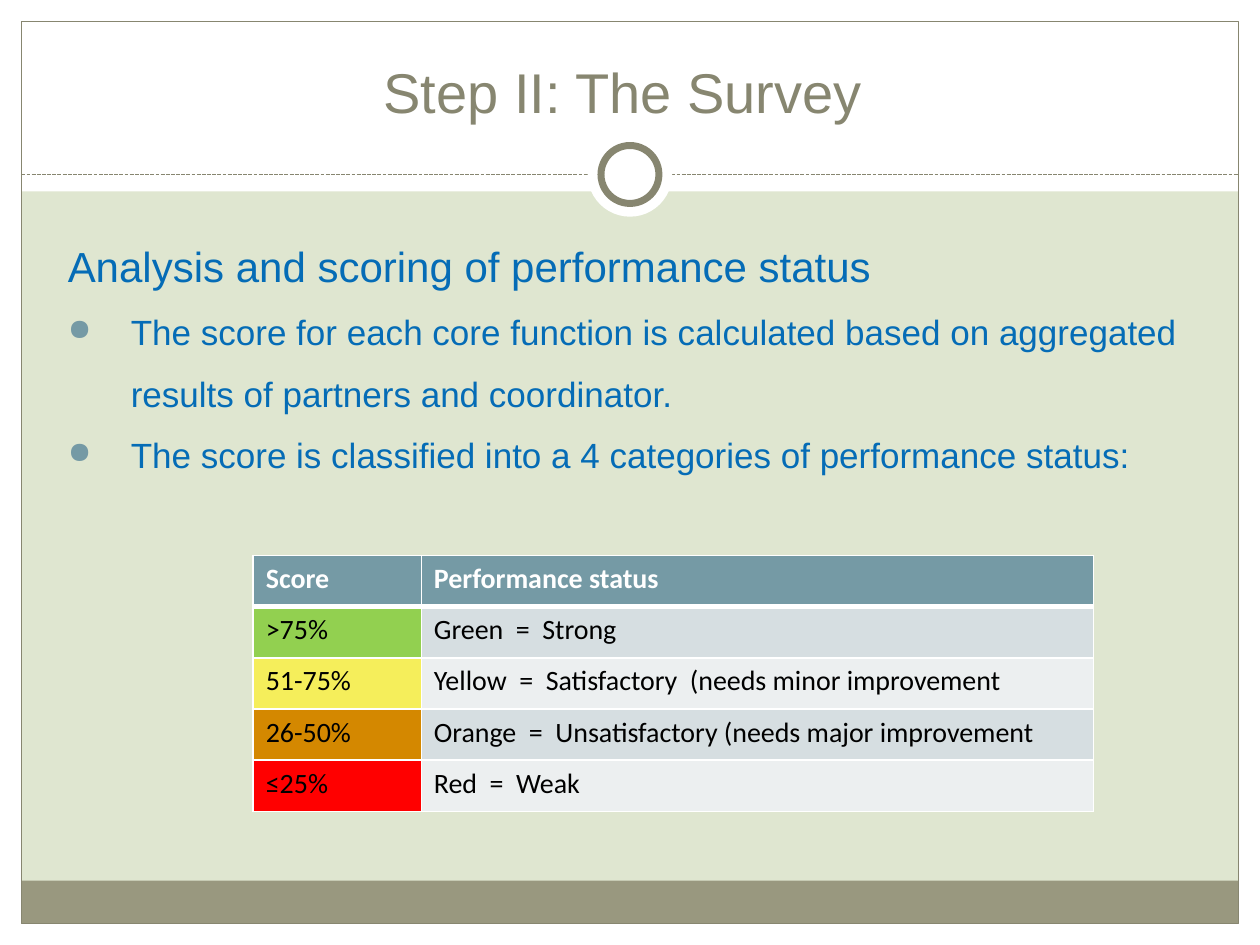
import pptx
import pptx.util
import pptx.dml.color
import pptx.enum.dml
import pptx.enum.shapes
import pptx.enum.text
import pptx.oxml
import pptx.oxml.ns
from lxml import etree
from dataclasses import dataclass
from typing import NamedTuple

Pt = pptx.util.Pt
KIND = pptx.enum.shapes.MSO_SHAPE
ALIGN = pptx.enum.text.PP_ALIGN
ANCHOR = pptx.enum.text.MSO_ANCHOR
qn = pptx.oxml.ns.qn


@dataclass(frozen=True)
class Theme:
    page: str = "DFE6D0"
    white: str = "FFFFFF"
    black: str = "000000"
    olive: str = "878670"
    foot: str = "99987F"
    blue: str = "056CB6"
    teal: str = "759AA5"
    bands: tuple = ("D6DEE1", "ECEFF0")
    face: str = "Arial"
    grid: str = "Calibri"
    title: int = 32
    lead: int = 24
    point: int = 20
    cell: int = 16
    thin: float = 0.75
    ring: int = 4


class Box(NamedTuple):
    x: float
    y: float
    w: float
    h: float

    def inner(self, x, y, w, h):
        return Box(self.x + x, self.y + y, w, h)

    def place(self):
        return [unit(v) for v in self]


THEME = Theme()
COLS, ROWS = 100, 75
PAGE = Box(0, 0, COLS, ROWS)
LEAD = "Analysis and scoring of performance status"
POINTS = [
    "The score for each core function is calculated based on aggregated results of partners and coordinator.",
    "The score is classified into a 4 categories of performance status:",
]
HEAD = ("Score", "Performance status")
SCORES = [
    (">75%", "Green  =  Strong", "92D050"),
    ("51-75%", "Yellow  =  Satisfactory  (needs minor improvement", "F5EE5B"),
    ("26-50%", "Orange  =  Unsatisfactory (needs major improvement", "D48800"),
    ("≤25%", "Red  =  Weak", "FF0000"),
]


def unit(n):
    return pptx.util.Inches(n / 10)


def color(code):
    return pptx.dml.color.RGBColor.from_string(code)


def apply(item, form):
    for name, value in form.items():
        setattr(item, name, value)


def paint(item, code):
    item.fill.solid()
    item.fill.fore_color.rgb = color(code)


def write(para, text, size, code, face=THEME.face, bold=False):
    run = para.add_run()
    run.text = text
    apply(run.font, {"size": Pt(size), "name": face, "bold": bold})
    run.font.color.rgb = color(code)


def stroke(line, code, width):
    line.color.rgb = color(code)
    line.width = Pt(width)


def shape(slide, box, kind=KIND.RECTANGLE, fill=None, edge=None, width=THEME.thin):
    item = slide.shapes.add_shape(kind, *box.place())
    item.shadow.inherit = False
    if fill:
        paint(item, fill)
    else:
        item.fill.background()
    if edge:
        stroke(item.line, edge, width)
    else:
        item.line.fill.background()


def panel(slide, box, anchor):
    frame = slide.shapes.add_textbox(*box.place()).text_frame
    apply(frame, {"word_wrap": True, "vertical_anchor": anchor})
    return frame


def edges(slide, box):
    rim, top = 1.7, 15.2
    for side in (
        box.inner(0, box.h - rim, box.w, rim),
        box.inner(0, 0, box.w, top),
        box.inner(0, 0, rim, box.h),
        box.inner(box.w - rim, 0, rim, box.h),
    ):
        shape(slide, side, fill=THEME.white)


def border(slide, box):
    foot = 3.4
    shape(slide, box.inner(0, box.h - foot, box.w, foot), fill=THEME.foot)
    shape(slide, box, edge=THEME.olive)


def rule(slide, box):
    mid = box.y + box.h / 2
    line = slide.shapes.add_connector(
        pptx.enum.shapes.MSO_CONNECTOR.STRAIGHT,
        unit(box.x), unit(mid), unit(box.x + box.w), unit(mid),
    )
    stroke(line.line, THEME.olive, THEME.thin)
    line.line.dash_style = pptx.enum.dml.MSO_LINE.SQUARE_DOT
    etree.SubElement(line._element.spPr, qn("a:effectLst"))
    for size, edge in ((box.h, None), (4.6, THEME.olive)):
        disc = box.inner((box.w - size) / 2, (box.h - size) / 2, size, size)
        shape(slide, disc, KIND.OVAL, THEME.white, edge, THEME.ring)


def title(slide, box):
    para = panel(slide, box, ANCHOR.BOTTOM).paragraphs[0]
    para.alignment = ALIGN.CENTER
    write(para, "Step II: The Survey", THEME.title, THEME.olive)


def indent(para, left, first):
    props = para._p.get_or_add_pPr()
    props.set("marL", str(unit(left)))
    props.set("indent", str(unit(first)))
    return props


def bullet(para):
    props = indent(para, 6.1, -5)
    tint = etree.SubElement(props, qn("a:buClr"))
    etree.SubElement(tint, qn("a:srgbClr"), val=THEME.teal)
    etree.SubElement(props, qn("a:buSzPct"), val="85000")
    etree.SubElement(props, qn("a:buChar"), char="●")


def body(slide, box):
    frame = panel(slide, box, ANCHOR.TOP)
    para = frame.paragraphs[0]
    para.line_spacing = 1.47
    indent(para, 1.1, 0)
    write(para, LEAD, THEME.lead, THEME.blue)
    for text in POINTS:
        para = frame.add_paragraph()
        para.line_spacing = 1.47
        bullet(para)
        write(para, text, THEME.point, THEME.blue)


def outline(cell, widths):
    props = cell._tc.get_or_add_tcPr()
    for spot, (side, width) in enumerate(widths.items()):
        line = etree.Element(qn("a:" + side), w=str(Pt(width)))
        fill = etree.SubElement(line, qn("a:solidFill"))
        etree.SubElement(fill, qn("a:srgbClr"), val=THEME.white)
        props.insert(spot, line)


def scores(slide, box):
    rows = [(HEAD, (THEME.teal, THEME.teal))]
    for spot, (score, state, tint) in enumerate(SCORES):
        rows.append(((score, state), (tint, THEME.bands[spot % 2])))
    table = slide.shapes.add_table(len(rows), len(HEAD), *box.place()).table
    for col, share in zip(table.columns, (0.2, 0.8)):
        col.width = unit(box.w * share)
    for r, (texts, fills) in enumerate(rows):
        table.rows[r].height = unit(box.h / len(rows))
        for c, (text, fill) in enumerate(zip(texts, fills)):
            cell = table.cell(r, c)
            paint(cell, fill)
            ink = THEME.black if r else THEME.white
            write(cell.text_frame.paragraphs[0], text, THEME.cell, ink, THEME.grid, r == 0)
            outline(cell, {"lnL": 1, "lnR": 1, "lnT": 3 if r == 1 else 1, "lnB": 1 if r else 3})


def survey(deck):
    slide = deck.slides.add_slide(deck.slide_layouts[6])
    paint(slide.background, THEME.page)
    edges(slide, PAGE)
    border(slide, PAGE.inner(1.7, 1.7, 96.6, 71.6))
    rule(slide, PAGE.inner(1.7, 10.5, 96.6, 6.7))
    title(slide, PAGE.inner(2.8, 2.1, 93.3, 8.3))
    body(slide, PAGE.inner(3.3, 16.7, 93, 50))
    scores(slide, PAGE.inner(20.1, 44.1, 66.7, 20.3))


def main():
    deck = pptx.Presentation()
    apply(deck, {"slide_width": unit(COLS), "slide_height": unit(ROWS)})
    survey(deck)
    deck.save("out.pptx")


if __name__ == "__main__":
    main()
